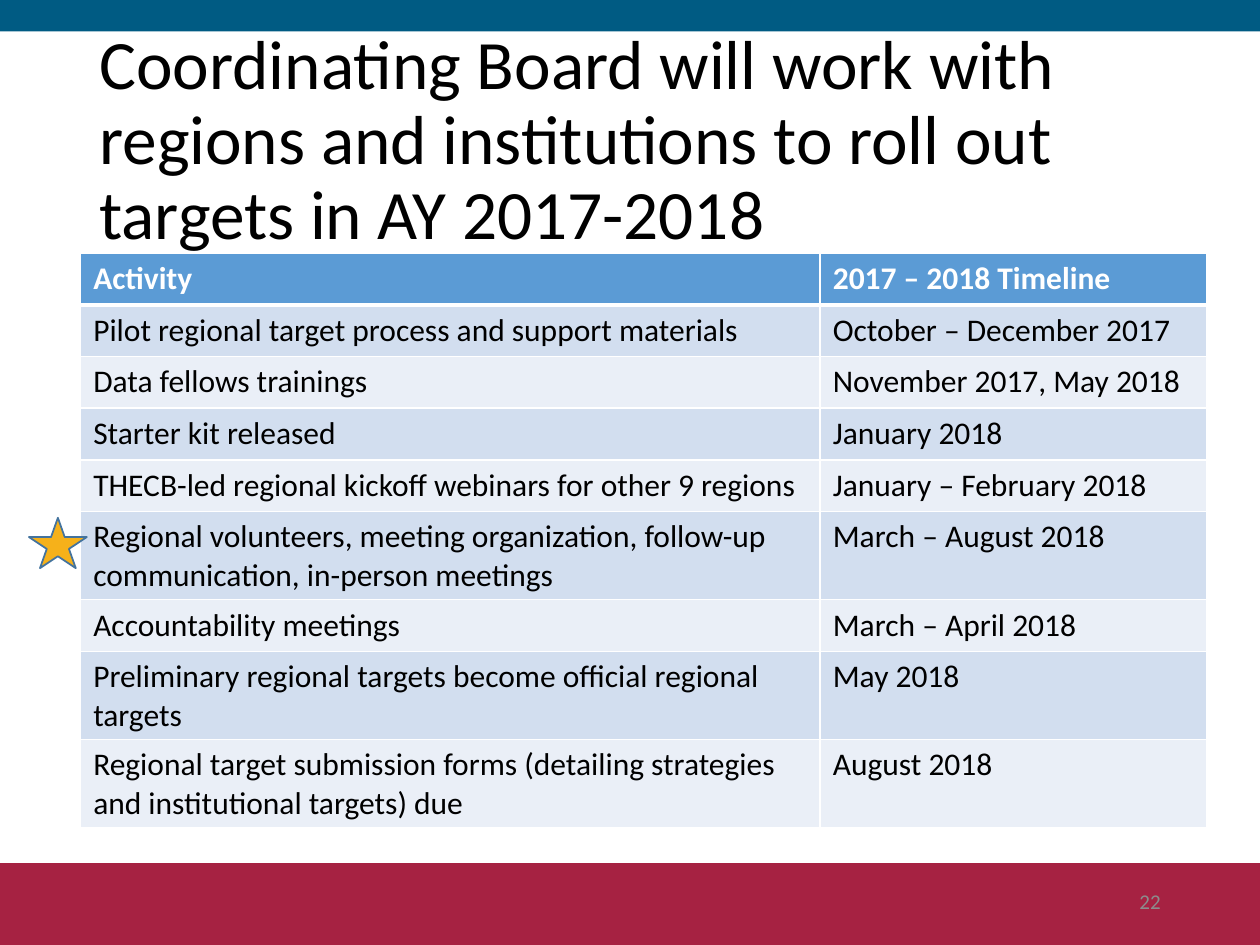
from dataclasses import dataclass

from lxml.etree import SubElement
from pptx import Presentation
from pptx.dml.color import RGBColor
from pptx.enum.shapes import MSO_SHAPE as Shape
from pptx.enum.text import MSO_ANCHOR as Anchor, PP_ALIGN as Align
from pptx.oxml.ns import qn
from pptx.util import Inches, Pt


@dataclass(frozen=True)
class Theme:
    """Colours, font and type sizes of the slide."""
    font: str = "Calibri"
    blue: str = "005B83"
    red: str = "A62242"
    gold: str = "F6B11A"
    outline: str = "43739E"
    header: str = "5B9BD5"
    bands: tuple = ("D2DEEF", "EAEFF7")
    white: str = "FFFFFF"
    black: str = "000000"
    grey: str = "8C8C8C"
    title_size: float = 39.6
    table_size: float = 18
    number_size: float = 12


THEME = Theme()

ACTIVITIES = [
    ("Activity", "2017 – 2018 Timeline"),
    ("Pilot regional target process and support materials", "October – December 2017"),
    ("Data fellows trainings", "November 2017, May 2018"),
    ("Starter kit released", "January 2018"),
    ("THECB-led regional kickoff webinars for other 9 regions", "January – February 2018"),
    ("Regional volunteers, meeting organization, follow-up communication, "
     "in-person meetings", "March – August 2018"),
    ("Accountability meetings", "March – April 2018"),
    ("Preliminary regional targets become official regional targets", "May 2018"),
    ("Regional target submission forms (detailing strategies and institutional "
     "targets) due", "August 2018"),
]


def write(tf, text, size, color=THEME.black, bold=False, align=Align.LEFT, spacing=None):
    """Put one formatted paragraph in a text frame."""
    p = tf.paragraphs[0]
    p.alignment = align
    if spacing:
        p.line_spacing = spacing
    r = p.add_run()
    r.text = text
    r.font.name = THEME.font
    r.font.size = Pt(size)
    r.font.bold = bold
    r.font.color.rgb = RGBColor.from_string(color)


def add_text(s, box, text, size, **fmt):
    """Add a wrapped, vertically centred text box."""
    tf = s.shapes.add_textbox(*map(Inches, box)).text_frame
    tf.word_wrap = True
    tf.vertical_anchor = Anchor.MIDDLE
    write(tf, text, size, **fmt)


def add_figure(s, kind, box, fill, line=None):
    """Add a filled preset shape with an optional outline."""
    sp = s.shapes.add_shape(kind, *map(Inches, box))
    sp.shadow.inherit = False
    sp.fill.solid()
    sp.fill.fore_color.rgb = RGBColor.from_string(fill)
    if line:
        sp.line.color.rgb = RGBColor.from_string(line)
        sp.line.width = Pt(1)
    else:
        sp.line.fill.background()


def set_borders(cell, color, bottom=1):
    """Draw the four borders of a table cell."""
    tc_pr = cell._tc.get_or_add_tcPr()
    for side, width in (("L", 1), ("R", 1), ("T", 1), ("B", bottom)):
        ln = SubElement(tc_pr, qn(f"a:ln{side}"), w=str(Pt(width)))
        SubElement(SubElement(ln, qn("a:solidFill")), qn("a:srgbClr"), val=color)


def add_timeline(s, box, widths, row_height, rows):
    """Add the banded table of activities and dates."""
    table = s.shapes.add_table(len(rows), len(widths), *map(Inches, box)).table
    table.horz_banding = False
    for column, width in zip(table.columns, widths):
        column.width = Inches(width)
    for i, row in enumerate(rows):
        head = i == 0
        table.rows[i].height = Inches(row_height)
        for j, text in enumerate(row):
            cell = table.cell(i, j)
            set_borders(cell, THEME.white, bottom=3 if head else 1)
            cell.fill.solid()
            fill = THEME.header if head else THEME.bands[(i - 1) % 2]
            cell.fill.fore_color.rgb = RGBColor.from_string(fill)
            write(cell.text_frame, text, THEME.table_size, bold=head,
                  color=THEME.white if head else THEME.black)


def main():
    """Build the slide and save it."""
    prs = Presentation()
    prs.slide_width, prs.slide_height = Inches(10), Inches(7.5)
    s = prs.slides.add_slide(prs.slide_layouts[6])
    add_figure(s, Shape.RECTANGLE, (0, 6.85, 10, 0.67), THEME.red)
    add_figure(s, Shape.RECTANGLE, (0, 0, 10, 0.25), THEME.blue)
    add_text(s, (0.69, 0.4, 8.62, 1.45),
             "Coordinating Board will work with regions and institutions "
             "to roll out targets in AY 2017-2018", THEME.title_size, spacing=0.9)
    add_timeline(s, (0.64, 2.01, 8.94, 4.53), (5.87, 3.07), 0.41, ACTIVITIES)
    add_text(s, (7.06, 6.95, 2.25, 0.4), "22", THEME.number_size,
             color=THEME.grey, align=Align.RIGHT)
    add_figure(s, Shape.STAR_5_POINT, (0.23, 4.11, 0.46, 0.4), THEME.gold, THEME.outline)
    prs.save("out.pptx")


if __name__ == "__main__":
    main()
